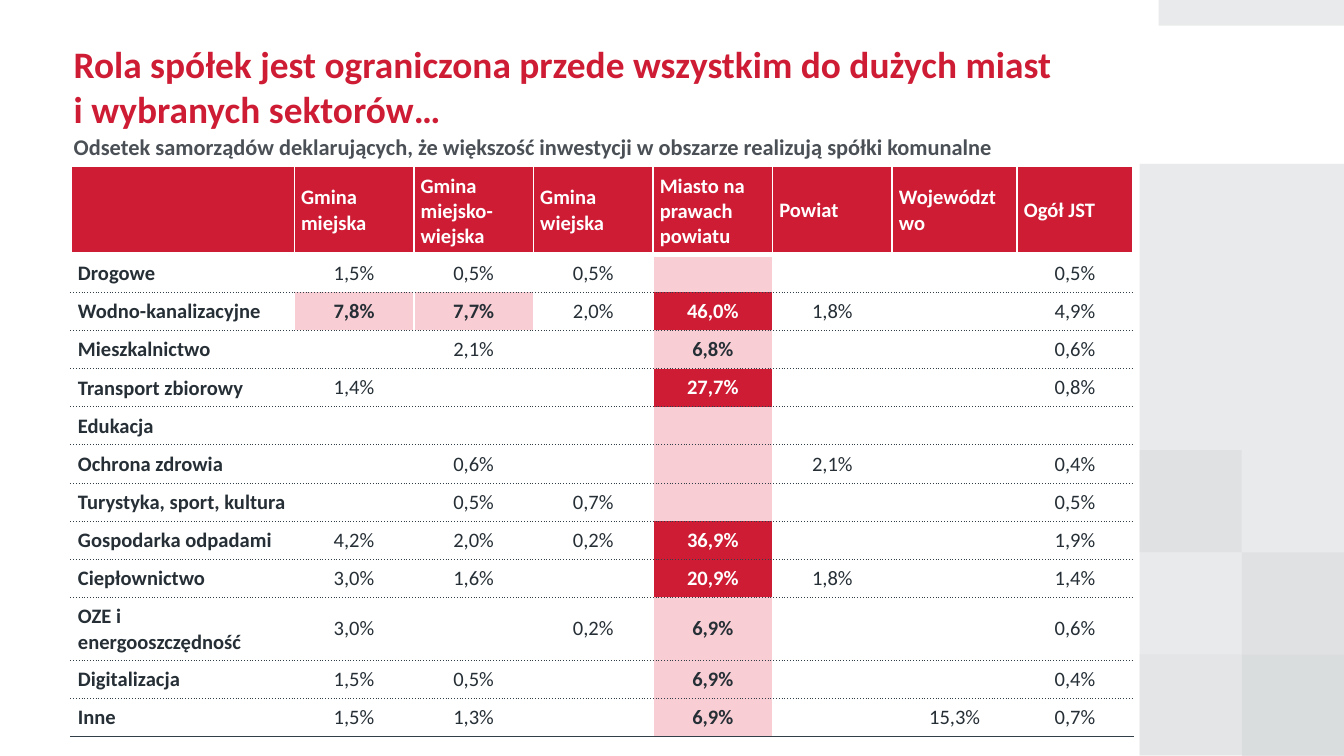
from lxml.etree import SubElement
from pptx import Presentation
from pptx.dml.color import RGBColor
from pptx.enum.shapes import MSO_SHAPE
from pptx.enum.text import MSO_ANCHOR, PP_ALIGN
from pptx.oxml.ns import qn
from pptx.util import Inches, Pt

RED, PINK, WHITE, DARK, RULE = "CE1C35", "F8CED4", "FFFFFF", "262F36", "333F48"


def paint(color, value):
    color.rgb = RGBColor.from_string(value)


def style(par, size, value, bold=True):
    for run in par.runs:
        run.font.name = "Calibri"
        run.font.size = Pt(size)
        run.font.bold = bold
        paint(run.font.color, value)


deck = Presentation()
deck.slide_width = Inches(10)
deck.slide_height = Inches(10 * 9 / 16)
slide = deck.slides.add_slide(deck.slide_layouts[6])

side = 0.76
left, mid = 8.48, 9.24
tiles = [
    (left, 1.22, 1.52, 4.4, "E4E5E6", 80),
    (8.62, 0, 1.38, 0.19, "E4E5E6", 80),
    (mid, 4.87, side, side, "D7DADB", 80),
    (left, 4.87, side, side, "D7DADB", 30),
    (mid, 4.11, side, side, "D7DADB", 50),
    (left, 3.35, side, side, "D7DADB", 50),
]
for x, y, w, h, value, alpha in tiles:
    tile = slide.shapes.add_shape(
        MSO_SHAPE.RECTANGLE, Inches(x), Inches(y), Inches(w), Inches(h))
    tile.shadow.inherit = False
    tile.line.fill.background()
    tile.fill.solid()
    paint(tile.fill.fore_color, value)
    tint = tile.fill._xPr.find(qn("a:solidFill"))[0]
    SubElement(tint, qn("a:alpha"), val=str(alpha * 1000))

heads = [
    ("Rola spółek jest ograniczona przede wszystkim do dużych miast i wybranych sektorów…",
     0.26, 7.54, 0.76, 20, RED, MSO_ANCHOR.MIDDLE),
    ("Odsetek samorządów deklarujących, że większość inwestycji w obszarze realizują spółki komunalne",
     0.94, 7.35, 0.3, 12, "4A5055", MSO_ANCHOR.TOP),
]
for text, y, w, h, size, value, anchor in heads:
    frame = slide.shapes.add_textbox(
        Inches(0.45), Inches(y), Inches(w), Inches(h)).text_frame
    frame.word_wrap = True
    frame.vertical_anchor = anchor
    frame.text = text
    style(frame.paragraphs[0], size, value)

rows = [
    ["", "Gmina miejska", "Gmina miejsko-wiejska", "Gmina wiejska",
     "Miasto na prawach powiatu", "Powiat", "Województwo", "Ogół JST"],
    ["Drogowe", "1,5%", "0,5%", "0,5%", "", "", "", "0,5%"],
    ["Wodno-kanalizacyjne", "7,8%", "7,7%", "2,0%", "46,0%", "1,8%", "", "4,9%"],
    ["Mieszkalnictwo", "", "2,1%", "", "6,8%", "", "", "0,6%"],
    ["Transport zbiorowy", "1,4%", "", "", "27,7%", "", "", "0,8%"],
    ["Edukacja", "", "", "", "", "", "", ""],
    ["Ochrona zdrowia", "", "0,6%", "", "", "2,1%", "", "0,4%"],
    ["Turystyka, sport, kultura", "", "0,5%", "0,7%", "", "", "", "0,5%"],
    ["Gospodarka odpadami", "4,2%", "2,0%", "0,2%", "36,9%", "", "", "1,9%"],
    ["Ciepłownictwo", "3,0%", "1,6%", "", "20,9%", "1,8%", "", "1,4%"],
    ["OZE i energooszczędność", "3,0%", "", "0,2%", "6,9%", "", "", "0,6%"],
    ["Digitalizacja", "1,5%", "0,5%", "", "6,9%", "", "", "0,4%"],
    ["Inne", "1,5%", "1,3%", "", "6,9%", "", "15,3%", "0,7%"],
]
widths = [1.66] + [0.89] * 5 + [0.93, 0.86]
city, last = 4, len(rows) - 1
strong = {(2, city), (4, city), (8, city), (9, city)}
light = {(2, 1), (2, 2)}

table = slide.shapes.add_table(
    len(rows), len(widths), Inches(0.53), Inches(1.24), Inches(7.91), Inches(4.23)).table
table.first_row = table.horz_banding = False
for col, width in zip(table.columns, widths):
    col.width = Inches(width)
for r, row in enumerate(rows):
    table.rows[r].height = Inches(0.26 if r else 0.5)
    for c, text in enumerate(row):
        cell = table.cell(r, c)
        label = r == 0 or c == 0
        pad = Inches(0.05 if label else 0)
        cell.margin_left = cell.margin_right = pad
        cell.margin_top = cell.margin_bottom = pad
        cell.vertical_anchor = MSO_ANCHOR.MIDDLE

        dots, white = (RULE, 0.5, "sysDot"), (WHITE, 1, "solid")
        top = white if r < 2 else dots
        if r == 0:
            base = (WHITE, 3, "solid")
        elif r == last:
            base = (RULE, 1, "solid")
        else:
            base = dots
        props = cell._tc.get_or_add_tcPr()
        for edge, (value, size, dash) in zip("LRTB", (white, white, top, base)):
            line = SubElement(props, qn("a:ln" + edge), w=str(Pt(size)))
            SubElement(SubElement(line, qn("a:solidFill")), qn("a:srgbClr"), val=value)
            SubElement(line, qn("a:prstDash"), val=dash)

        solid = r == 0 or (r, c) in strong
        if solid or c == city or (r, c) in light:
            cell.fill.solid()
            paint(cell.fill.fore_color, RED if solid else PINK)
        else:
            cell.fill.background()

        par = cell.text_frame.paragraphs[0]
        if text:
            par.text = text
            par.alignment = PP_ALIGN.LEFT if label else PP_ALIGN.CENTER
            bold = label or c == city or (r, c) in light
            style(par, 11, WHITE if solid else DARK, bold)
        else:
            SubElement(par._p, qn("a:endParaRPr"), sz="1100")

deck.save("out.pptx")
